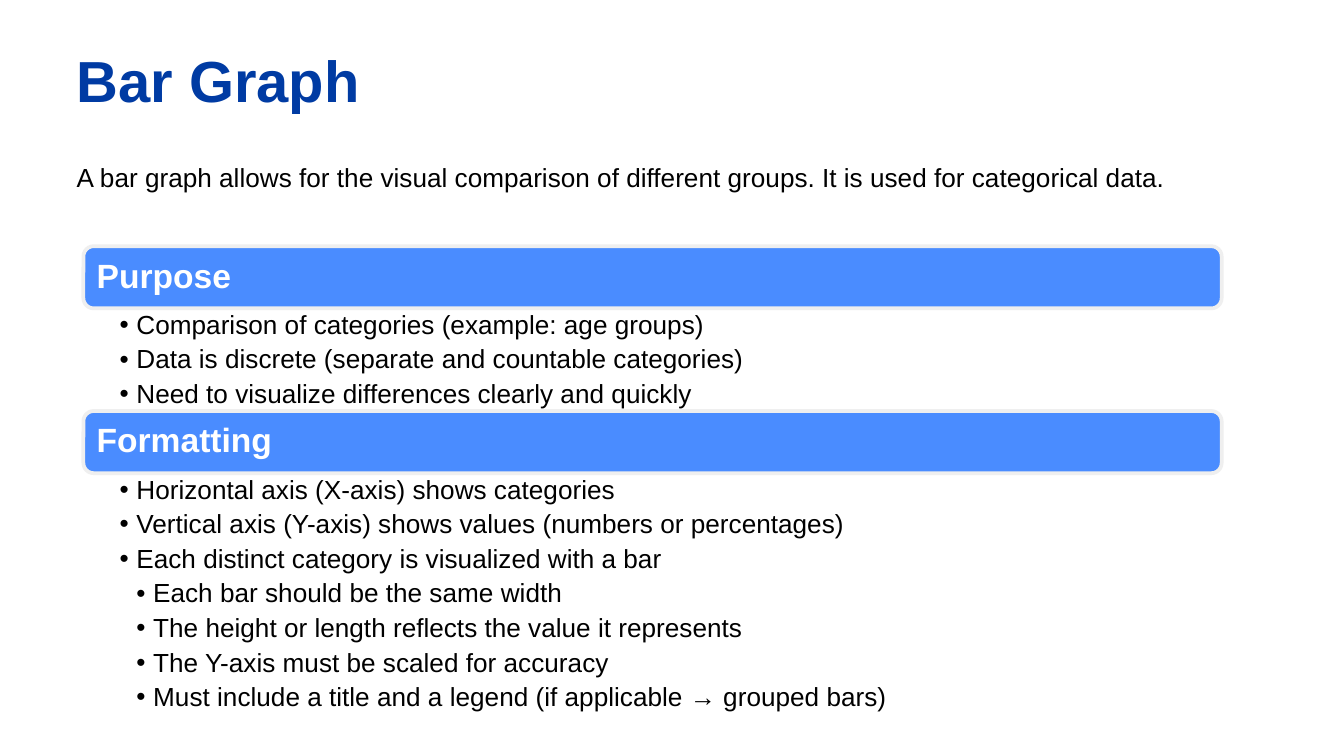
from lxml.etree import SubElement
from pptx import Presentation
from pptx.dml.color import RGBColor
from pptx.enum.shapes import MSO_SHAPE
from pptx.enum.text import MSO_ANCHOR, PP_ALIGN
from pptx.oxml.ns import qn
from pptx.util import Pt

COLORS = {"title": "003BA3", "text": "000000", "bar": "4A8CFF",
          "edge": "EFEFEF", "white": "FFFFFF"}
LEFT, WIDTH, BAR_HEIGHT = 44.7, 609.8, 33.3
SECTIONS = [
    ("Purpose", 131.9, 54, [
        (0, "Comparison of categories (example: age groups)"),
        (0, "Data is discrete (separate and countable categories)"),
        (0, "Need to visualize differences clearly and quickly"),
    ]),
    ("Formatting", 220.2, 126, [
        (0, "Horizontal axis (X-axis) shows categories"),
        (0, "Vertical axis (Y-axis) shows values (numbers or percentages)"),
        (0, "Each distinct category is visualized with a bar"),
        (1, "Each bar should be the same width"),
        (1, "The height or length reflects the value it represents"),
        (1, "The Y-axis must be scaled for accuracy"),
        (1, "Must include a title and a legend (if applicable → grouped bars)"),
    ]),
]


def rgb(name):
    return RGBColor.from_string(COLORS[name])


def add_text(p, text, size=14, color="text", bold=False, spacing=None, after=0):
    p.alignment = PP_ALIGN.LEFT
    p.space_before = Pt(0)
    p.space_after = Pt(after)
    if spacing:
        p.line_spacing = spacing
    r = p.add_run()
    r.text = text
    r.font.name = "Arial"
    r.font.size = Pt(size)
    r.font.bold = bold
    r.font.color.rgb = rgb(color)


class Deck:
    def __init__(self, s):
        self.s = s

    def frame(self, sp, margins, anchor=MSO_ANCHOR.TOP):
        tf = sp.text_frame
        tf.word_wrap = True
        tf.vertical_anchor = anchor
        tf.margin_left, tf.margin_top, tf.margin_right, tf.margin_bottom = map(Pt, margins)
        return tf

    def title(self, text, x, y, w, h):
        sp = self.s.shapes.title
        sp.left, sp.top, sp.width, sp.height = map(Pt, (x, y, w, h))
        tf = self.frame(sp, [7.2] * 4)
        add_text(tf.paragraphs[0], text, size=31, color="title", bold=True)

    def intro(self, text, x, y, w, h):
        sp = self.s.shapes.add_textbox(*map(Pt, (x, y, w, h)))
        tf = self.frame(sp, (7.2, 3.6, 7.2, 3.6))
        add_text(tf.paragraphs[0], text)

    def bar(self, text, y):
        sp = self.s.shapes.add_shape(
            MSO_SHAPE.ROUNDED_RECTANGLE, *map(Pt, (LEFT, y, WIDTH, BAR_HEIGHT)))
        sp.shadow.inherit = False
        sp.fill.solid()
        sp.fill.fore_color.rgb = rgb("bar")
        sp.line.color.rgb = rgb("edge")
        sp.line.width = Pt(2)
        tf = self.frame(sp, (5.5, 3.6, 5.5, 3.6), MSO_ANCHOR.MIDDLE)
        add_text(tf.paragraphs[0], text, size=18, color="white", bold=True, spacing=0.9)

    def bullets(self, items, y, h):
        sp = self.s.shapes.add_textbox(*map(Pt, (LEFT, y, WIDTH, h)))
        tf = self.frame(sp, (19.4, 1.8, 10, 1.8))
        for i, (level, text) in enumerate(items):
            p = tf.add_paragraph() if i else tf.paragraphs[0]
            p.level = level + 1
            pPr = p._p.get_or_add_pPr()
            pPr.set("marL", str(Pt(9 * (level + 1))))
            pPr.set("indent", str(Pt(-9)))
            color = SubElement(pPr, qn("a:buClr"))
            SubElement(color, qn("a:srgbClr"), val=COLORS["text"])
            SubElement(pPr, qn("a:buFont"), typeface="Arial")
            SubElement(pPr, qn("a:buChar"), char="•")
            add_text(p, text, spacing=0.9, after=3.4)


def main():
    prs = Presentation()
    prs.slide_width, prs.slide_height = Pt(720), Pt(405)
    deck = Deck(prs.slides.add_slide(prs.slide_layouts[5]))
    deck.title("Bar Graph", 34, 16.6, 620.6, 78.5)
    deck.intro("A bar graph allows for the visual comparison of different groups. "
               "It is used for categorical data.", 34, 83, 651.6, 24.5)
    for heading, y, height, items in SECTIONS:
        deck.bar(heading, y)
        deck.bullets(items, y + BAR_HEIGHT, height)
    prs.save("out.pptx")


if __name__ == "__main__":
    main()
